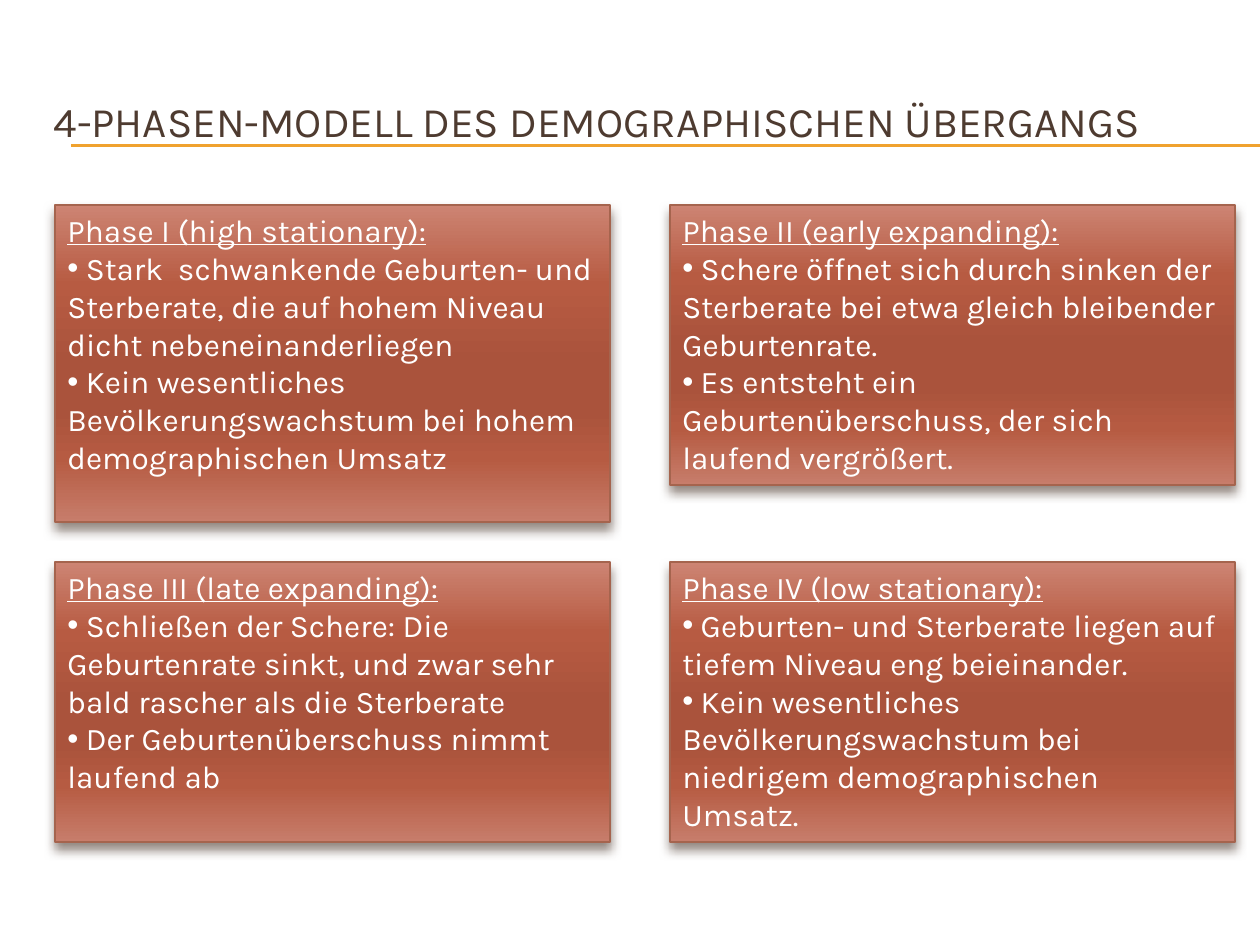
"""Build a slide with the four phases of the demographic transition."""
from lxml import etree
from pptx import Presentation, util as u
from pptx.dml.color import RGBColor
from pptx.enum import shapes, text
from pptx.oxml import parse_xml
from pptx.oxml.ns import nsdecls, qn

PX = u.Inches(1) / 126
FONT = "Karla"
COLORS = {"title": "4E3B30", "rule": "F0A22E", "border": "A5644E",
          "text": "FFFFFF", "shadow": "4E3B30"}
GRADIENT = {0: "CD8473", 25: "B75B42", 50: "AA533C",
            65: "AA533C", 80: "B65B42", 100: "C77D6B"}
TOP, BOTTOM = 205, 562
LEFT_COLUMN, RIGHT_COLUMN = (55, 555), (670, 565)
PHASES = [
    (LEFT_COLUMN, TOP, 317, "Phase I (high stationary):", [
        " Stark  schwankende Geburten- und Sterberate, die auf hohem Niveau dicht nebeneinanderliegen",
        " Kein wesentliches Bevölkerungswachstum bei hohem demographischen Umsatz"]),
    (LEFT_COLUMN, BOTTOM, 280, "Phase III (late expanding):", [
        " Schließen der Schere: Die Geburtenrate sinkt, und zwar sehr bald rascher als die Sterberate",
        " Der Geburtenüberschuss nimmt laufend ab"]),
    (RIGHT_COLUMN, TOP, 280, "Phase II (early expanding):", [
        " Schere öffnet sich durch sinken der Sterberate bei etwa gleich bleibender Geburtenrate.",
        " Es entsteht ein Geburtenüberschuss, der sich laufend vergrößert."]),
    (RIGHT_COLUMN, BOTTOM, 280, "Phase IV (low stationary):", [
        " Geburten- und Sterberate liegen auf tiefem Niveau eng beieinander.",
        " Kein wesentliches Bevölkerungswachstum bei niedrigem demographischen Umsatz."]),
]


def emu(*lengths):
    return [u.Emu(round(length * PX)) for length in lengths]


def add_run(paragraph, wording, size, color, underline=False):
    run = paragraph.add_run()
    run.text = wording
    run.font.name = FONT
    run.font.size = u.Pt(size)
    run.font.underline = underline
    run.font.color.rgb = RGBColor.from_string(COLORS[color])


presentation = Presentation()
presentation.slide_width, presentation.slide_height = emu(1260, 945)
slide = presentation.slides.add_slide(presentation.slide_layouts[5])

for y in (145, 146):
    rule = slide.shapes.add_connector(
        shapes.MSO_CONNECTOR.STRAIGHT, *emu(71, y, 1260, y))
    rule.line.color.rgb = RGBColor.from_string(COLORS["rule"])
    rule.line.width = u.Pt(0.75)
    etree.SubElement(rule._element.spPr, qn("a:effectLst"))

title = slide.shapes.title
title.left, title.top, title.width, title.height = emu(41, 63, 1197, 116)
title.text_frame.vertical_anchor = text.MSO_ANCHOR.MIDDLE
title.text_frame.auto_size = text.MSO_AUTO_SIZE.NONE
title.text_frame.paragraphs[0].alignment = text.PP_ALIGN.LEFT
add_run(title.text_frame.paragraphs[0],
        "4-PHASEN-MODELL DES DEMOGRAPHISCHEN ÜBERGANGS", 24, "title")

for (left, width), top, height, heading, points in PHASES:
    box = slide.shapes.add_shape(
        shapes.MSO_SHAPE.RECTANGLE, *emu(left, top, width, height))
    box.line.color.rgb = RGBColor.from_string(COLORS["border"])
    box.line.width = u.Pt(0.79)

    box.fill.gradient()
    box.fill.gradient_angle = 270
    stops = box._element.spPr.find(".//" + qn("a:gsLst"))
    stops.clear()
    for position, color in GRADIENT.items():
        stop = etree.SubElement(stops, qn("a:gs"), pos=str(position * 1000))
        etree.SubElement(stop, qn("a:srgbClr"), val=color)

    box.shadow.inherit = False
    box._element.spPr.find(qn("a:effectLst")).append(parse_xml(
        f'<a:outerShdw {nsdecls("a")} blurRad="{u.Pt(6)}" dist="{u.Pt(4)}" '
        f'dir="5400000" rotWithShape="0"><a:srgbClr val="{COLORS["shadow"]}">'
        '<a:alpha val="60000"/></a:srgbClr></a:outerShdw>'))

    frame = box.text_frame
    frame.word_wrap = True
    frame.vertical_anchor = text.MSO_ANCHOR.TOP
    paragraph = frame.paragraphs[0]
    paragraph.alignment = text.PP_ALIGN.LEFT
    add_run(paragraph, heading, 18, "text", underline=True)
    for point in points:
        paragraph = frame.add_paragraph()
        paragraph.alignment = text.PP_ALIGN.LEFT
        properties = paragraph._p.get_or_add_pPr()
        etree.SubElement(properties, qn("a:buFont"), typeface="Arial")
        etree.SubElement(properties, qn("a:buChar"), char="•")
        add_run(paragraph, point, 18, "text")

presentation.save("out.pptx")
